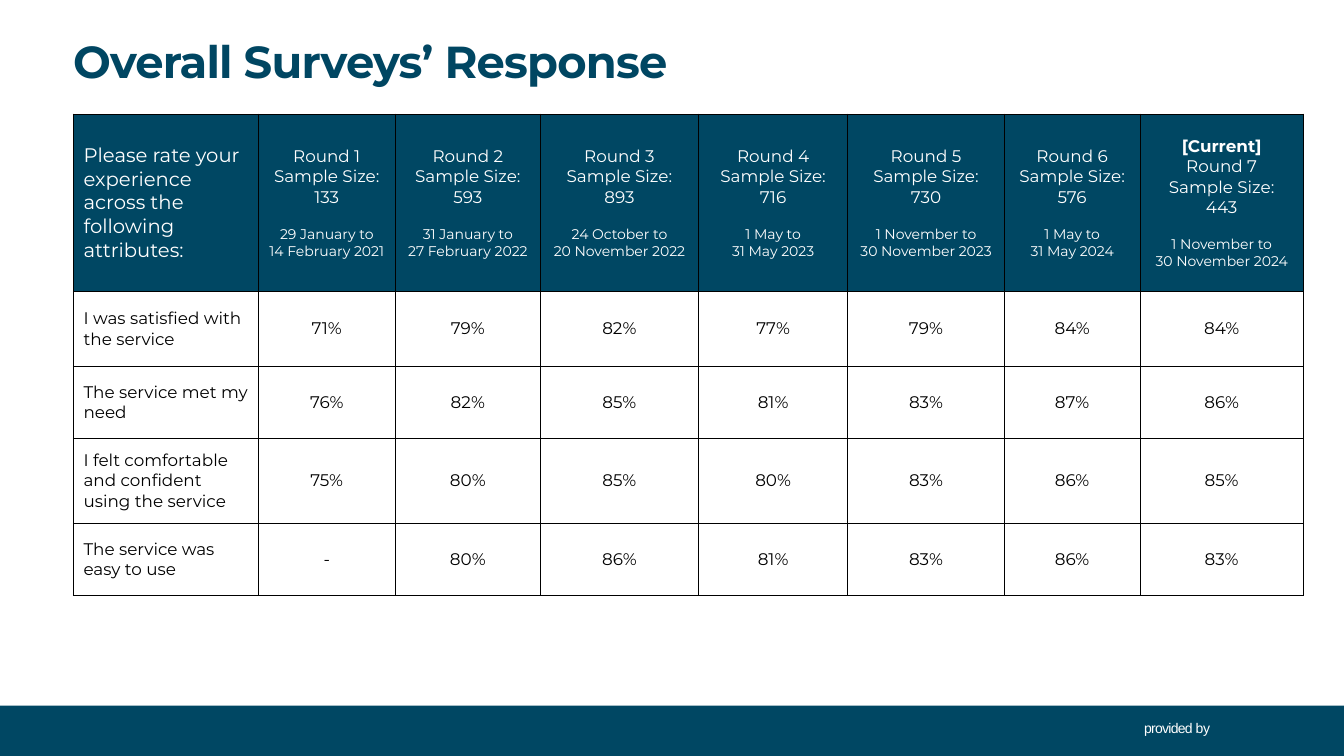
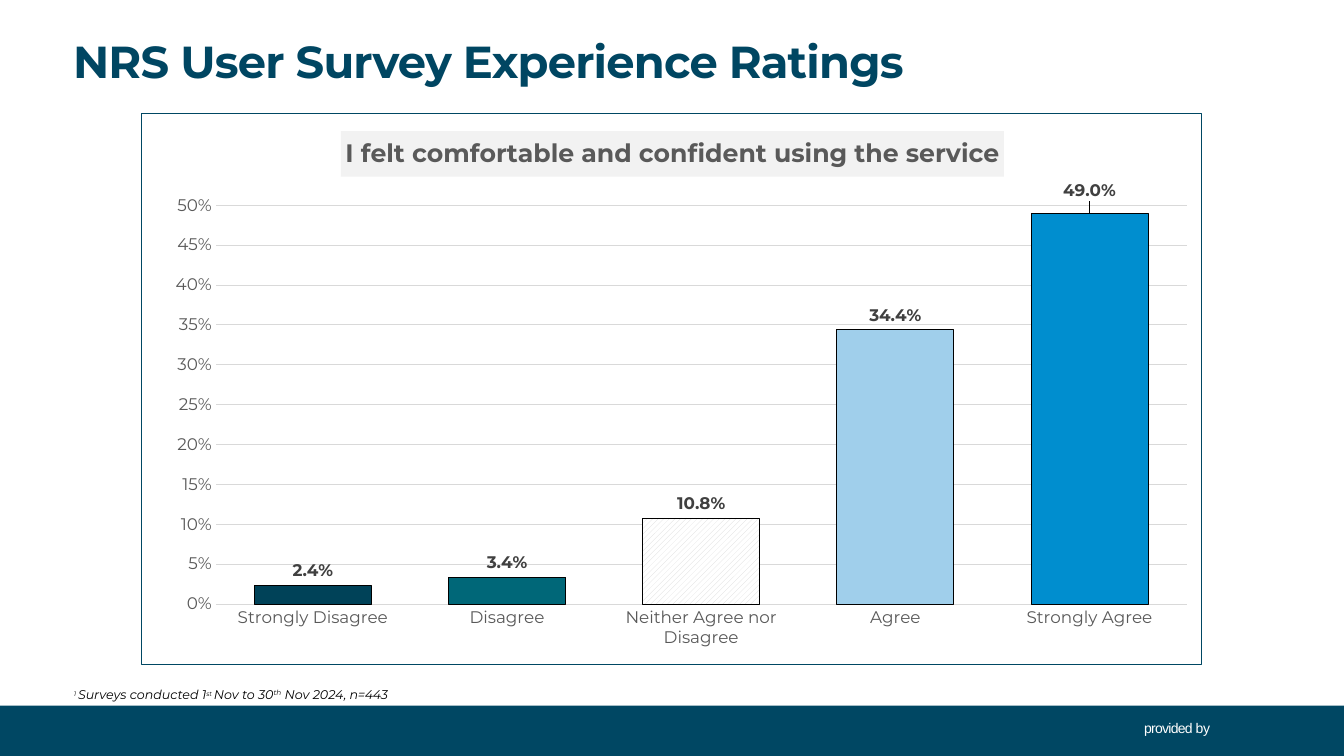
import pptx
import pptx.chart.data
import pptx.dml.color
import pptx.enum.chart
import pptx.enum.dml
import pptx.enum.shapes
import pptx.enum.text
import pptx.oxml
import pptx.oxml.ns
import pptx.util

COLORS = {
    "band": "004763", "title": "004662", "white": "FFFFFF", "black": "000000",
    "grid": "D9D9D9", "axis": "595959", "label": "404040", "shade": "F2F2F2",
    "strongly disagree": "004258", "disagree": "006778",
    "agree": "A0CFEB", "strongly agree": "008ECF",
}
ALIGN = pptx.enum.text.PP_ALIGN
ANCHOR = pptx.enum.text.MSO_ANCHOR

ROUNDS = [
    (["Round 1", "Sample Size: 133"], ["29 January to", "14 February 2021"]),
    (["Round 2", "Sample Size: 593"], ["31 January to", "27 February 2022"]),
    (["Round 3", "Sample Size: 893"], ["24 October to", "20 November 2022"]),
    (["Round 4", "Sample Size: 716"], ["1 May to", "31 May 2023"]),
    (["Round 5", "Sample Size: 730"], ["1 November to", "30 November 2023"]),
    (["Round 6", "Sample Size: 576"], ["1 May to", "31 May 2024"]),
    (["[Current]", "Round 7", "Sample Size:", "443"],
     ["1 November to", "30 November 2024"]),
]
QUESTION = "Please rate your experience across the following attributes:"
RESPONSES = [
    ("I was satisfied with the service", "71% 79% 82% 77% 79% 84% 84%"),
    ("The service met my need", "76% 82% 85% 81% 83% 87% 86%"),
    ("I felt comfortable and confident using the service",
     "75% 80% 85% 80% 83% 86% 85%"),
    ("The service was easy to use", "- 80% 86% 81% 83% 86% 83%"),
]
RATINGS = [
    ("Strongly Disagree", 0.024, "strongly disagree"),
    ("Disagree", 0.034, "disagree"),
    ("Neither Agree nor Disagree", 0.108, None),
    ("Agree", 0.344, "agree"),
    ("Strongly Agree", 0.49, "strongly agree"),
]


def rgb(name):
    """Return the named colour."""
    return pptx.dml.color.RGBColor.from_string(COLORS[name])


def xml(tag, inner):
    """Build an element with the drawing and chart namespaces."""
    ns = pptx.oxml.ns.nsdecls("a", "c")
    return pptx.oxml.parse_xml(f"<{tag} {ns}>{inner}</{tag}>")


def layout(x, y, w=None, h=None, inner=False, mode="edge"):
    """Build a manual chart layout from shares of the chart."""
    target = '<c:layoutTarget val="inner"/>' if inner else ""
    modes = f'<c:xMode val="{mode}"/><c:yMode val="{mode}"/>' if mode else ""
    sizes = zip("xywh", (x, y, w, h))
    vals = "".join(f'<c:{k} val="{v}"/>' for k, v in sizes if v is not None)
    return xml("c:layout",
               f"<c:manualLayout>{target}{modes}{vals}</c:manualLayout>")


def solid(name):
    """Return the markup of a solid fill."""
    return f'<a:solidFill><a:srgbClr val="{COLORS[name]}"/></a:solidFill>'


def set_font(font, size, color, bold=False, italic=False, name="Montserrat"):
    """Apply one text style to a font."""
    font.name, font.size = name, pptx.util.Pt(size)
    font.bold, font.italic = bold, italic
    font.color.rgb = rgb(color)


class Deck:
    """Hold the style, the grid and the current slide."""

    COLS, ROWS = 160, 90

    def __init__(self):
        """Start a widescreen presentation."""
        self.prs = pptx.Presentation()
        self.prs.slide_width = pptx.util.Inches(13.33)
        self.prs.slide_height = pptx.util.Inches(7.5)
        self.s = None

    def x(self, cols):
        """Turn grid columns into a length."""
        return int(self.prs.slide_width * cols / self.COLS)

    def y(self, rows):
        """Turn grid rows into a length."""
        return int(self.prs.slide_height * rows / self.ROWS)

    def box(self, left, top, width, height):
        """Turn grid units into a position and a size."""
        return self.x(left), self.y(top), self.x(width), self.y(height)

    def frame(self, tf, indent):
        """Strip the margins of a text frame and indent its first paragraph."""
        tf.word_wrap = True
        tf.auto_size = pptx.enum.text.MSO_AUTO_SIZE.NONE
        tf.vertical_anchor = ANCHOR.TOP
        tf.margin_left = tf.margin_right = tf.margin_top = tf.margin_bottom = 0
        p = tf.paragraphs[0]
        p.alignment = ALIGN.LEFT
        pPr = p._p.get_or_add_pPr()
        pPr.set("marL", str(self.x(indent)))
        pPr.set("indent", "0")
        return p

    def slide(self, title):
        """Add a slide with its title, band and footer."""
        self.s = self.prs.slides.add_slide(self.prs.slide_layouts[5])
        band = self.s.shapes.add_shape(
            pptx.enum.shapes.MSO_SHAPE.RECTANGLE, *self.box(0, 84, 160, 6))
        band.shadow.inherit = False
        band.fill.solid()
        band.fill.fore_color.rgb = rgb("band")
        band.line.fill.background()
        sp = self.s.shapes.title
        sp.left, sp.top, sp.width, sp.height = self.box(5.4, 4, 133, 6.7)
        sp.text_frame.text = title
        p = self.frame(sp.text_frame, 3.3)
        r = p.runs[0]
        set_font(r.font, 32, "title", bold=True)
        r._r.get_or_add_rPr().set("spc", "-60")
        p = self.text((136.1, 85.6, 8.2, 2.3), 0.1, [
            ("provided ", 10, {"spc": -50}), ("by", 10, {"spc": -20})],
            "white", name="Arial")
        p.line_spacing = pptx.util.Pt(12)

    def text(self, place, indent, runs, color, **style):
        """Add a one-paragraph text box made of runs."""
        sp = self.s.shapes.add_textbox(*self.box(*place))
        p = self.frame(sp.text_frame, indent)
        for text, size, attrs in runs:
            r = p.add_run()
            r.text = text
            set_font(r.font, size, color, **style)
            for key, val in attrs.items():
                r._r.get_or_add_rPr().set(key, str(val))
        return p

    def cell(self, cell, lines, color, fill, align):
        """Fill a table cell with (text, size, bold, space before) lines."""
        tcPr = cell._tc.get_or_add_tcPr()
        for side in "LRTB":
            ln = xml(f"a:ln{side}", solid("black"))
            ln.set("w", str(pptx.util.Pt(1)))
            tcPr.append(ln)
        cell.fill.solid()
        cell.fill.fore_color.rgb = rgb(fill)
        cell.vertical_anchor = ANCHOR.MIDDLE
        tf = cell.text_frame
        tf.text = "\n".join(line[0] for line in lines)
        for p, (_, size, bold, before) in zip(tf.paragraphs, lines):
            p.alignment = align
            if before:
                p.space_before = pptx.util.Pt(before)
            set_font(p.runs[0].font, size, color, bold=bold)

    def table(self, left, top, cols, rows, data):
        """Add a table whose first row is a header and first column labels."""
        place = self.box(left, top, sum(cols), sum(rows))
        tbl = self.s.shapes.add_table(len(rows), len(cols), *place).table
        tbl.first_row = tbl.horz_banding = False
        for col, width in zip(tbl.columns, cols):
            col.width = self.x(width)
        for row, height in zip(tbl.rows, rows):
            row.height = self.y(height)
        for i, row in enumerate(data):
            color, fill = ("black", "white") if i else ("white", "band")
            for j, lines in enumerate(row):
                align = ALIGN.CENTER if j else ALIGN.LEFT
                self.cell(tbl.cell(i, j), lines, color, fill, align)

    def chart(self, place, title, ratings):
        """Add a column chart with one colour for each rating."""
        cd = pptx.chart.data.CategoryChartData(number_format="0.0%")
        cd.categories = [name for name, _, _ in ratings]
        cd.add_series("Series 1", [val for _, val, _ in ratings])
        kind = pptx.enum.chart.XL_CHART_TYPE.COLUMN_CLUSTERED
        chart = self.s.shapes.add_chart(kind, *self.box(*place), cd).chart
        set_font(chart.font, 10, "black")
        chart.has_legend = False
        self.chart_title(chart, title)
        self.axes(chart)
        self.columns(chart.plots[0], ratings)
        root = chart.element.chart
        area = root.plotArea
        for old in area.findall(pptx.oxml.ns.qn("c:layout")):
            area.remove(old)
        area.insert(0, layout(0.07, 0.166, 0.916, 0.724, inner=True))
        root.addnext(xml("c:spPr", solid("white")
                         + f'<a:ln w="9525">{solid("band")}</a:ln>'))

    def chart_title(self, chart, title):
        """Put a shaded title above the plot."""
        tf = chart.chart_title.text_frame
        tf.text = title
        set_font(tf.paragraphs[0].runs[0].font, 18, "axis", bold=True)
        chart.chart_title.include_in_layout = False
        el = chart.element.chart.find(pptx.oxml.ns.qn("c:title"))
        for old in el.findall(pptx.oxml.ns.qn("c:layout")):
            el.remove(old)
        el.find(pptx.oxml.ns.qn("c:tx")).addnext(layout(0.188, 0.031))
        overlay = el.find(pptx.oxml.ns.qn("c:overlay"))
        overlay.addnext(xml("c:spPr", solid("shade")))

    def axes(self, chart):
        """Format both axes and the gridlines."""
        val, cat = chart.value_axis, chart.category_axis
        for axis in (val, cat):
            axis.major_tick_mark = pptx.enum.chart.XL_TICK_MARK.NONE
            axis.minor_tick_mark = pptx.enum.chart.XL_TICK_MARK.NONE
            set_font(axis.tick_labels.font, 12, "axis")
        val.minimum_scale, val.maximum_scale, val.major_unit = 0, 0.5, 0.05
        val.tick_labels.number_format = "0%"
        val.tick_labels.number_format_is_linked = False
        val.format.line.fill.background()
        val.has_major_gridlines = True
        for line in (val.major_gridlines.format.line, cat.format.line):
            line.color.rgb = rgb("grid")
            line.width = pptx.util.Pt(0.75)

    def columns(self, plot, ratings):
        """Colour and label the columns, lifting the last label."""
        plot.gap_width, plot.overlap = 66, -27
        plot.vary_by_categories = False
        ser = plot.series[0]
        end = pptx.enum.chart.XL_LABEL_POSITION.OUTSIDE_END
        labels = ser.data_labels
        labels.show_value = True
        labels.number_format, labels.number_format_is_linked = "0.0%", False
        last = ser.points[len(ratings) - 1].data_label
        for label in (labels, last):
            set_font(label.font, 12, "label", bold=True)
            label.position = end
        idx = ser.data_labels._element.find(
            f'{pptx.oxml.ns.qn("c:dLbl")}/{pptx.oxml.ns.qn("c:idx")}')
        idx.addnext(layout(0, -0.015, mode=None))
        for i, (_, _, color) in enumerate(ratings):
            fmt = ser.points[i].format
            if color:
                fmt.fill.solid()
                fmt.fill.fore_color.rgb = rgb(color)
            else:
                fmt.fill.patterned()
                fmt.fill.pattern = (
                    pptx.enum.dml.MSO_PATTERN.WIDE_UPWARD_DIAGONAL)
                fmt.fill.fore_color.rgb = rgb("grid")
                fmt.fill.back_color.rgb = rgb("white")
            fmt.line.color.rgb = rgb("black")
            fmt.line.width = pptx.util.Pt(0.5)


def round_lines(names, dates):
    """Return the header lines of one survey round."""
    lines = [(name, 12, name == "[Current]", 0) for name in names]
    return lines + [(d, 10, False, 0 if i else 12.8)
                    for i, d in enumerate(dates)]


def main():
    """Build and save both slides."""
    deck = Deck()
    deck.slide("Overall Surveys’ Response")
    data = [[[(QUESTION, 14, False, 0)]] + [round_lines(*r) for r in ROUNDS]]
    for label, shares in RESPONSES:
        data.append([[(t, 12, False, 0)] for t in [label, *shares.split()]])
    deck.table(8.75, 13.6, [22, 16.3, 17.3, 18.8, 17.8, 18.6, 16.2, 19.4],
               [21.1, 8.9, 8.6, 10.1, 8.6], data)

    deck.slide("NRS User Survey Experience Ratings")
    deck.chart((16.8, 13.5, 126.3, 65.7),
               "I felt comfortable and confident using the service", RATINGS)
    raised = {"baseline": 28000}
    deck.text((8.3, 81.8, 76, 2), 0.5, [
        ("1 ", 8, raised), ("Surveys conducted 1", 9, {}), ("st ", 8, raised),
        ("Nov to 30", 9, {}), ("th", 9, {"baseline": 30000}),
        (" Nov 2024, ", 9, {}), ("n=443", 9, {"spc": -20})],
        "black", italic=True)
    deck.prs.save("out.pptx")


if __name__ == "__main__":
    main()
